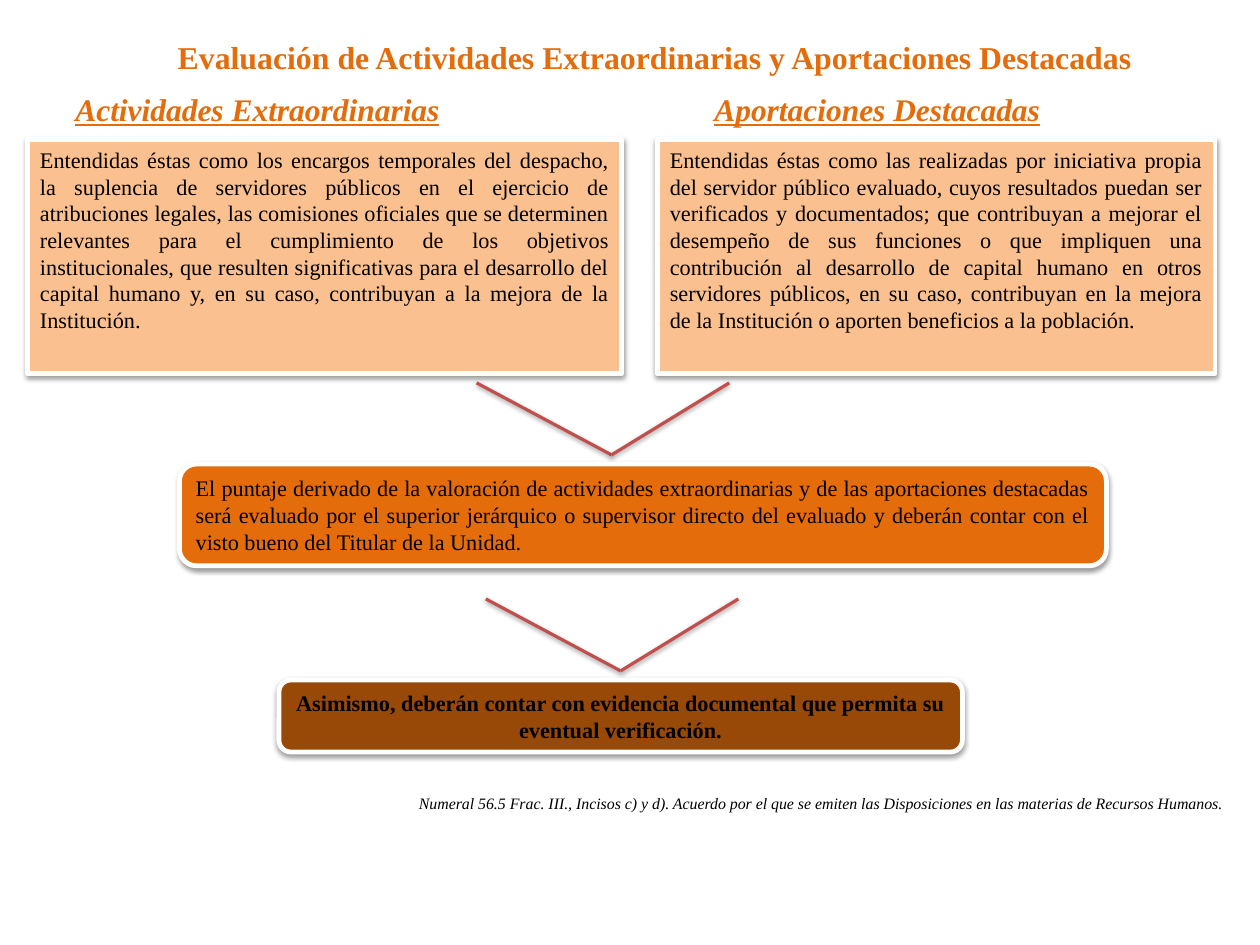
from dataclasses import dataclass, field
from typing import Any, Optional

import lxml.etree
import pptx
import pptx.dml.color
import pptx.enum.shapes
import pptx.enum.text
import pptx.oxml
import pptx.oxml.ns
import pptx.slide
import pptx.util

Inches = pptx.util.Inches
Align = pptx.enum.text.PP_ALIGN
Anchor = pptx.enum.text.MSO_ANCHOR
AutoSize = pptx.enum.text.MSO_AUTO_SIZE
Shape = pptx.enum.shapes.MSO_SHAPE

CM_PER_INCH = 2.54
PAGE_SIZE = {
    "slide_width": Inches(28 / CM_PER_INCH),
    "slide_height": Inches(21 / CM_PER_INCH),
}
COLORS = {
    "orange": "E46C0A",
    "peach": "FAC090",
    "brown": "984807",
    "red": "C0504D",
    "white": "FFFFFF",
    "black": "000000",
}
HEADING = {"size": pptx.util.Pt(19.8), "bold": True, "italic": True, "underline": True}
BODY = {"size": pptx.util.Pt(14)}
WIDE_INSETS = (0.11, 0.06)
SHADOW = (
    '<a:outerShdw xmlns:a="http://schemas.openxmlformats.org/drawingml/2006/main" '
    'blurRad="40000" dist="20000" dir="5400000" rotWithShape="0">'
    '<a:srgbClr val="{color}"><a:alpha val="38000"/></a:srgbClr></a:outerShdw>'
)


@dataclass
class Block:
    text: str
    left: float
    top: float
    width: float
    height: float
    align: Any
    font: dict[str, Any]
    color: str = "black"
    fill: Optional[str] = None
    outline: Any = Shape.RECTANGLE
    insets: tuple[float, float] = (0.1, 0.05)
    frame: dict[str, Any] = field(default_factory=lambda: {"auto_size": AutoSize.SHAPE_TO_FIT_TEXT})
    spacing: Optional[float] = None


@dataclass
class Chevron:
    left: float
    top: float


FIXED = {"auto_size": AutoSize.NONE}
HEADING_FRAME = {"auto_size": AutoSize.NONE, "vertical_anchor": Anchor.BOTTOM}

BLOCKS = [
    Block("Evaluación de Actividades Extraordinarias y Aportaciones Destacadas",
          0.43, 0.28, 10.6, 0.44, Align.CENTER,
          {"size": pptx.util.Pt(20), "bold": True}, "orange"),
    Block("Actividades Extraordinarias", 0.55, 0.75, 3.86, 0.43, Align.LEFT, HEADING,
          "orange", insets=WIDE_INSETS, frame=HEADING_FRAME),
    Block("Entendidas éstas como los encargos temporales del despacho, la suplencia de "
          "servidores públicos en el ejercicio de atribuciones legales, las comisiones "
          "oficiales que se determinen relevantes para el cumplimiento de los objetivos "
          "institucionales, que resulten significativas para el desarrollo del capital "
          "humano y, en su caso, contribuyan a la mejora de la Institución.",
          0.24, 1.22, 5.2, 2.05, Align.JUSTIFY, BODY, fill="peach",
          insets=WIDE_INSETS, frame=FIXED),
    Block("Aportaciones Destacadas", 6.14, 0.75, 3.86, 0.43, Align.LEFT, HEADING,
          "orange", insets=WIDE_INSETS, frame=HEADING_FRAME, spacing=0.9),
    Block("Entendidas éstas como las realizadas por iniciativa propia del servidor público "
          "evaluado, cuyos resultados puedan ser verificados y documentados; que "
          "contribuyan a mejorar el desempeño de sus funciones o que impliquen una "
          "contribución al desarrollo de capital humano en otros servidores públicos, en "
          "su caso, contribuyan en la mejora de la Institución o aporten beneficios a la "
          "población.",
          5.75, 1.22, 4.88, 2.05, Align.JUSTIFY, BODY, fill="peach",
          insets=WIDE_INSETS, frame=FIXED),
    Block("El puntaje derivado de la valoración de actividades extraordinarias y de las "
          "aportaciones destacadas será evaluado por el superior jerárquico o supervisor "
          "directo del evaluado y deberán contar con el visto bueno del Titular de la Unidad.",
          1.57, 4.06, 8.11, 0.89, Align.JUSTIFY, BODY, fill="orange",
          outline=Shape.ROUNDED_RECTANGLE),
    Block("Asimismo, deberán contar con evidencia documental que permita su eventual "
          "verificación.",
          2.44, 5.95, 5.98, 0.63, Align.CENTER, {**BODY, "bold": True}, fill="brown",
          outline=Shape.ROUNDED_RECTANGLE),
    Block("Numeral 56.5 Frac. III., Incisos c) y d). Acuerdo por el que se emiten las "
          "Disposiciones en las materias de Recursos Humanos.",
          1.97, 6.89, 8.82, 0.27, Align.RIGHT,
          {"size": pptx.util.Pt(10), "italic": True}),
]
CHEVRONS = [Chevron(4.17, 3.35), Chevron(4.25, 5.24)]


def rgb(name: str) -> pptx.dml.color.RGBColor:
    return pptx.dml.color.RGBColor.from_string(COLORS[name])


def set_attributes(target: Any, values: dict[str, Any]) -> None:
    for name, value in values.items():
        setattr(target, name, value)


def set_line(line: Any, color: str, width: float) -> None:
    line.color.rgb = rgb(color)
    line.width = pptx.util.Pt(width)


def add_shadow(item: Any) -> None:
    properties = item._element.spPr
    effects = properties.find(pptx.oxml.ns.qn("a:effectLst"))
    if effects is None:
        effects = lxml.etree.SubElement(properties, pptx.oxml.ns.qn("a:effectLst"))
    effects.append(pptx.oxml.parse_xml(SHADOW.format(color=COLORS["black"])))


def draw_block(page: pptx.slide.Slide, block: Block) -> None:
    place = [Inches(value) for value in (block.left, block.top, block.width, block.height)]
    if block.fill:
        box = page.shapes.add_shape(block.outline, *place)
        box.fill.solid()
        box.fill.fore_color.rgb = rgb(block.fill)
        set_line(box.line, "white", 3)
        box.shadow.inherit = False
        add_shadow(box)
    else:
        box = page.shapes.add_textbox(*place)
    side, edge = map(Inches, block.insets)
    set_attributes(box.text_frame, {
        "word_wrap": True, "vertical_anchor": Anchor.TOP,
        "margin_left": side, "margin_right": side,
        "margin_top": edge, "margin_bottom": edge,
        **block.frame,
    })
    para = box.text_frame.paragraphs[0]
    set_attributes(para, {"alignment": block.align, "line_spacing": block.spacing})
    span = para.add_run()
    span.text = block.text
    set_attributes(span.font, {"name": "Times New Roman", **block.font})
    span.font.color.rgb = rgb(block.color)


def draw_chevron(page: pptx.slide.Slide, chevron: Chevron) -> None:
    tip_left, tip_top = chevron.left + 1.18, chevron.top + 0.63
    for start in (chevron.left, chevron.left + 2.21):
        arm = page.shapes.add_connector(
            pptx.enum.shapes.MSO_CONNECTOR.STRAIGHT,
            Inches(start), Inches(chevron.top), Inches(tip_left), Inches(tip_top))
        set_line(arm.line, "red", 2)
        add_shadow(arm)


def main() -> None:
    deck = pptx.Presentation()
    set_attributes(deck, PAGE_SIZE)
    page = deck.slides.add_slide(deck.slide_layouts[6])
    for block in BLOCKS:
        draw_block(page, block)
    for chevron in CHEVRONS:
        draw_chevron(page, chevron)
    deck.save("out.pptx")


if __name__ == "__main__":
    main()
